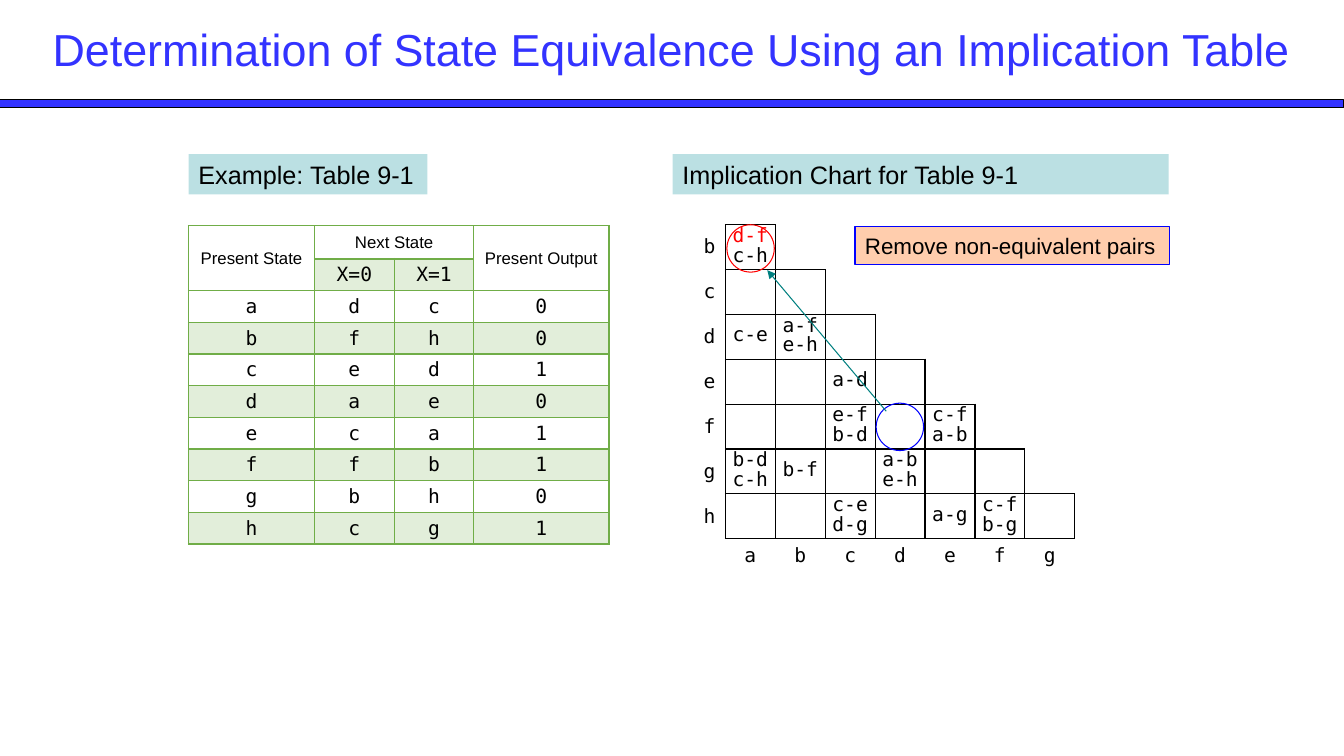
from lxml import etree
from pptx import Presentation
from pptx.dml.color import RGBColor
from pptx.enum.shapes import MSO_CONNECTOR, MSO_SHAPE
from pptx.enum.text import MSO_ANCHOR, MSO_AUTO_SIZE, PP_ALIGN
from pptx.oxml.ns import qn
from pptx.util import Inches, Pt

RECT, OVAL = MSO_SHAPE.RECTANGLE, MSO_SHAPE.OVAL
STRAIGHT = MSO_CONNECTOR.STRAIGHT
TOP, MIDDLE = MSO_ANCHOR.TOP, MSO_ANCHOR.MIDDLE
LEFT, CENTER, RIGHT = PP_ALIGN.LEFT, PP_ALIGN.CENTER, PP_ALIGN.RIGHT
NO_FIT = MSO_AUTO_SIZE.NONE
BLACK, BLUE, RED, GREEN = "000000", "3333FF", "FF0000", "70AD47"
SANS, MONO = "Arial", "DejaVu Sans Mono"
PLAIN = "{2D5ABB26-0587-4C30-8999-92F81FD0307C}"

STATES = [
    "adc0", "bfh0", "ced1", "dae0",
    "eca1", "ffb1", "gbh0", "hcg1",
]
PAIRS = {
    "ba": "d-f c-h", "da": "c-e", "db": "a-f e-h", "ec": "a-d",
    "fc": "e-f b-d", "fe": "c-f a-b", "ga": "b-d c-h", "gb": "b-f",
    "gd": "a-b e-h", "hc": "c-e d-g", "he": "a-g", "hf": "c-f b-g",
}


def put(item, values):
    for key, value in values.items():
        setattr(item, key, value)


def paint(color, code):
    color.rgb = RGBColor.from_string(code)


class Deck:
    def __init__(self):
        self.show = Presentation()
        put(self.show, {"slide_width": Inches(13.33), "slide_height": Inches(7.5)})
        self.slide = self.show.slides.add_slide(self.show.slide_layouts[5])
        self.shapes = self.slide.shapes

    def fill(self, item, code, alpha=100):
        if code is None:
            item.fill.background()
            return
        item.fill.solid()
        paint(item.fill.fore_color, code)
        if alpha < 100:
            node = item.fill._xPr.find(f"{qn('a:solidFill')}/{qn('a:srgbClr')}")
            etree.SubElement(node, qn("a:alpha"), val=str(alpha * 1000))

    def text(self, frame, lines, size, font=SANS, colors=(BLACK,), **form):
        for n, line in enumerate(lines):
            para = frame.paragraphs[0] if n == 0 else frame.add_paragraph()
            put(para, form)
            run = para.add_run()
            run.text = line
            put(run.font, {"size": Pt(size), "name": font})
            paint(run.font.color, colors[n % len(colors)])

    def title(self, text, box):
        shape = self.shapes.title
        put(shape, dict(zip(("left", "top", "width", "height"), map(Inches, box))))
        put(shape.text_frame, {"vertical_anchor": MIDDLE, "word_wrap": True, "auto_size": NO_FIT})
        self.text(shape.text_frame, [text], 32, colors=[BLUE], alignment=CENTER)

    def shape(self, kind, box, fill=None, line=None, alpha=100):
        shape = self.shapes.add_shape(kind, *map(Inches, box))
        shape.shadow.inherit = False
        self.fill(shape, fill, alpha)
        if line:
            paint(shape.line.color, line)
            shape.line.width = Pt(0.75)
        else:
            shape.line.fill.background()
        return shape

    def label(self, text, box, size, wrap=True, **look):
        frame = self.shape(RECT, box, **look).text_frame
        put(frame, {"word_wrap": wrap, "vertical_anchor": TOP})
        self.text(frame, [text], size, alignment=LEFT)

    def arrow(self, start, end, color):
        line = self.shapes.add_connector(STRAIGHT, *map(Inches, start + end))
        paint(line.line.color, color)
        line.line.width = Pt(0.75)
        etree.SubElement(line.line._get_or_add_ln(), qn("a:tailEnd"), type="triangle")
        etree.SubElement(line._element.spPr, qn("a:effectLst"))

    def table(self, box, cols, rows):
        frame = self.shapes.add_table(len(rows), len(cols), *map(Inches, box))
        grid = frame.table
        put(grid, {"first_row": False, "horz_banding": False})
        frame._element.xpath(".//a:tableStyleId")[0].text = PLAIN
        for col, width in zip(grid.columns, cols):
            col.width = Inches(width)
        for row, height in zip(grid.rows, rows):
            row.height = Inches(height)
        return grid

    def edge(self, cell, color, **widths):
        props = cell._tc.get_or_add_tcPr()
        for side in "LRTB":
            if side in widths:
                line = etree.SubElement(props, qn(f"a:ln{side}"), w=str(Pt(widths[side])))
                fill = etree.SubElement(line, qn("a:solidFill"))
                etree.SubElement(fill, qn("a:srgbClr"), val=color)

    def cell(self, cell, lines, size, font, side, top, anchor=MIDDLE, **form):
        put(cell, {
            "margin_left": Inches(side), "margin_right": Inches(side),
            "margin_top": Inches(top), "margin_bottom": Inches(top),
            "vertical_anchor": anchor,
        })
        self.text(cell.text_frame, lines, size, font, **form)


def state_table(deck):
    grid = deck.table((1.87, 2.24, 4.16, 3.16), (1.25, 0.79, 0.79, 1.34),
                      [0.33] + [2.83 / 9] * 9)
    rows = [["Present State", "Next State", "", "Present Output"],
            ["", "X=0", "X=1", ""], *STATES]
    for i, row in enumerate(rows):
        for j, text in enumerate(row):
            cell = grid.cell(i, j)
            inner = j in (1, 2)
            deck.edge(cell, GREEN, L=1, R=1, T=2 if inner and i == 1 else 1,
                      B=2 if inner and i == 0 else 1)
            tint = i % 2 and (i > 1 or inner)
            deck.fill(cell, GREEN if tint else None, 20)
            if text:
                size, font = (12, SANS) if i == 0 else (14, MONO)
                deck.cell(cell, [text], size, font, 0.1, 0, alignment=CENTER)
    for start, end in (((0, 0), (1, 0)), ((0, 1), (0, 2)), ((0, 3), (1, 3))):
        grid.cell(*start).merge(grid.cell(*end))


def pair_chart(deck):
    sides, feet = "bcdefgh", "abcdefg"
    grid = deck.table((6.7, 2.23, 3.96, 3.56), [3.96 / 8] * 8, [3.56 / 8] * 8)
    for i, side in enumerate(sides):
        deck.cell(grid.cell(i, 0), [side], 14, MONO, 0.1, 0.05, alignment=RIGHT)
        for j, foot in enumerate(feet[:i + 1], 1):
            cell = grid.cell(i, j)
            deck.edge(cell, BLACK, L=1, R=1, T=1, B=1)
            pair = side + foot
            if pair in PAIRS:
                colors = (RED, BLACK) if pair == "ba" else (BLACK,)
                deck.cell(cell, PAIRS[pair].split(), 14, MONO, 0, 0, colors=colors,
                          alignment=CENTER, line_spacing=Pt(14))
    for j, foot in enumerate(feet, 1):
        deck.cell(grid.cell(7, j), [foot], 14, MONO, 0.1, 0.05, TOP, alignment=CENTER)
    for cell in grid.iter_cells():
        deck.fill(cell, None)


def main():
    deck = Deck()
    deck.shape(RECT, (0, 0.99, 13.33, 0.08), BLUE, BLACK)
    deck.title("Determination of State Equivalence Using an Implication Table",
               (0.21, 0.13, 12.91, 0.71))
    state_table(deck)
    pair_chart(deck)
    deck.label("Remove non-equivalent pairs", (8.48, 2.25, 3.12, 0.37), 16, False,
               fill="FF6600", line="0000FF", alpha=32)
    deck.shape(OVAL, (8.69, 4, 0.47, 0.47), line="0000FF")
    deck.shape(OVAL, (7.21, 2.23, 0.47, 0.47), line=RED)
    deck.arrow((8.79, 4.08), (7.61, 2.68), "008080")
    for text, left, width in (("Example: Table 9-1", 1.87, 2.37),
                              ("Implication Chart for Table 9-1", 6.67, 4.92)):
        deck.label(text, (left, 1.53, width, 0.4), 18, fill="BBE0E3")
    deck.show.save("out.pptx")


if __name__ == "__main__":
    main()
